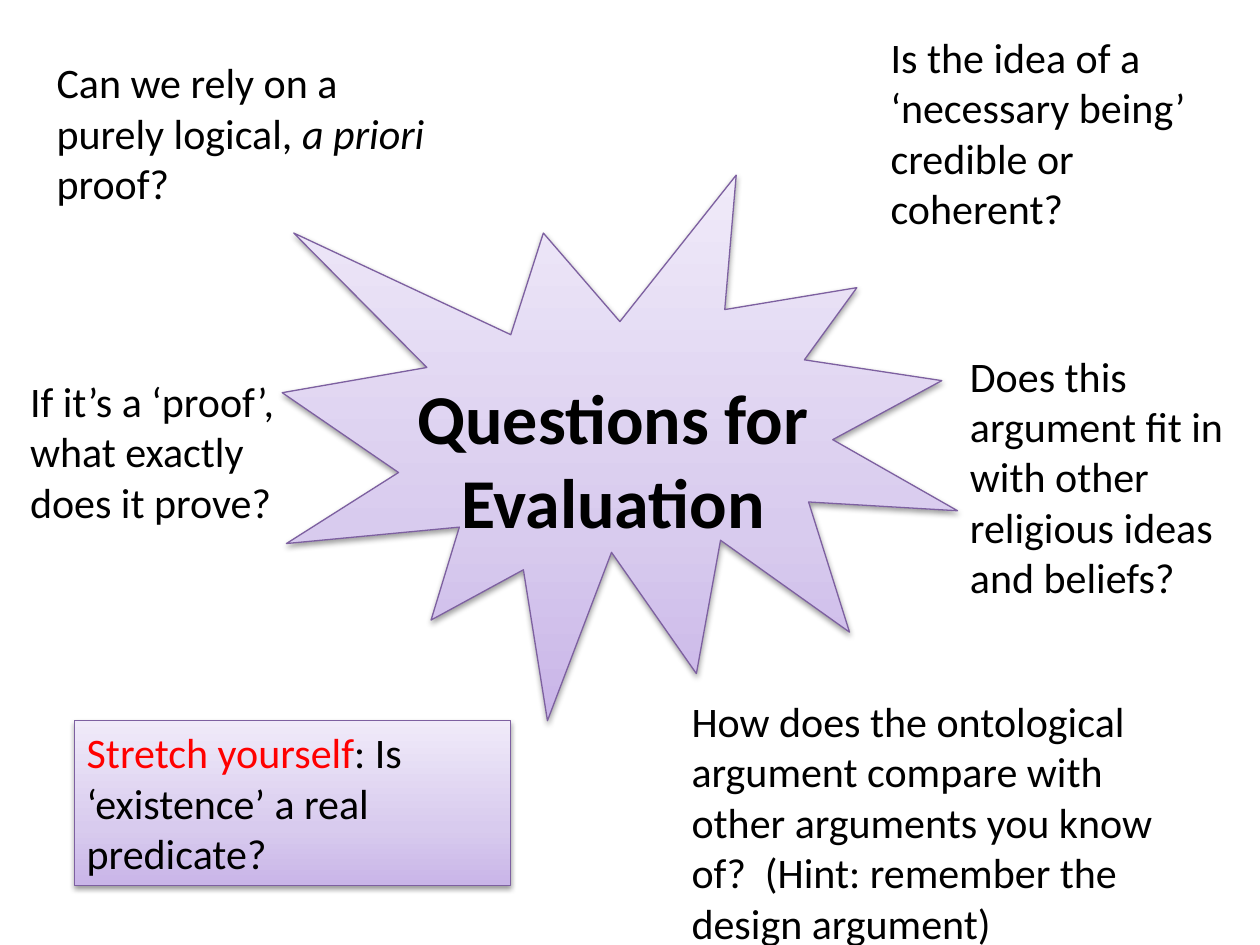
from pptx import Presentation
from pptx.dml.color import RGBColor
from pptx.enum.shapes import MSO_SHAPE
from pptx.enum.text import MSO_ANCHOR, PP_ALIGN
from pptx.oxml import parse_xml
from pptx.oxml.ns import nsdecls
from pptx.util import Inches, Pt

COLORS = {
    "text": "000000",
    "stretch": "FF0000",
    "outline": "7D60A0",
    "dark": "C9B5E8",
    "mid": "D8CBEE",
    "light": "F0EAF9",
}
STOPS = [(0, "dark"), (35, "mid"), (100, "light")]
COLS, ROWS = 100, 75


class Board:
    """Draws on one slide; every box is (column, row, columns, rows)."""
    font = "Calibri"

    def __init__(self, prs):
        self.s = prs.slides.add_slide(prs.slide_layouts[6])
        self.col = prs.slide_width / COLS
        self.row = prs.slide_height / ROWS

    def place(self, box):
        x, y, w, h = box
        return [round(v) for v in (x * self.col, y * self.row,
                                   w * self.col, h * self.row)]

    def set_text(self, sp, runs, size=24, bold=False, align=PP_ALIGN.LEFT,
                 anchor=MSO_ANCHOR.TOP):
        """Fill sp with runs of (text, colour name, italic)."""
        tf = sp.text_frame
        tf.word_wrap = True
        tf.vertical_anchor = anchor
        p = tf.paragraphs[0]
        p.alignment = align
        p.font.name, p.font.size, p.font.bold = self.font, Pt(size), bold
        for text, color, italic in runs:
            r = p.add_run()
            r.text = text
            r.font.italic = italic
            r.font.color.rgb = RGBColor.from_string(COLORS[color])

    def text(self, box, *runs, **style):
        sp = self.s.shapes.add_textbox(*self.place(box))
        self.set_text(sp, runs, **style)

    def shape(self, kind, box, *runs):
        """Add a shape with the lilac gradient, outline and soft shadow."""
        sp = self.s.shapes.add_shape(kind, *self.place(box))
        stops = "".join(
            f'<a:gs pos="{pos * 1000}"><a:srgbClr val="{COLORS[name]}"/></a:gs>'
            for pos, name in STOPS)
        spPr = sp.element.spPr
        spPr.append(parse_xml(
            f'<a:gradFill {nsdecls("a")} rotWithShape="1"><a:gsLst>{stops}'
            '</a:gsLst><a:lin ang="16200000" scaled="0"/></a:gradFill>'))
        sp.line.color.rgb = RGBColor.from_string(COLORS["outline"])
        sp.line.width = Pt(0.75)
        spPr.append(parse_xml(
            f'<a:effectLst {nsdecls("a")}><a:outerShdw blurRad="40000" '
            'dist="20000" dir="5400000" rotWithShape="0">'
            '<a:srgbClr val="000000"><a:alpha val="38000"/></a:srgbClr>'
            '</a:outerShdw></a:effectLst>'))
        if runs:
            self.set_text(sp, runs)


def main():
    prs = Presentation()
    prs.slide_width, prs.slide_height = Inches(10), Inches(7.5)
    board = Board(prs)

    board.shape(MSO_SHAPE.EXPLOSION1, (22.4, 13.9, 53.6, 43.3))
    board.text((24, 27.3, 49.3, 18.1),
               ("Questions for Evaluation", "text", False), size=40, bold=True,
               align=PP_ALIGN.CENTER, anchor=MSO_ANCHOR.MIDDLE)

    board.text((3.5, 4, 33.1, 13.1),
               ("Can we rely on a purely logical, ", "text", False),
               ("a priori", "text", True),
               (" proof?", "text", False))
    board.shape(MSO_SHAPE.RECTANGLE, (5.9, 57.2, 34.6, 13.1),
                ("Stretch yourself", "stretch", False),
                (": Is ‘existence’ a real predicate?", "text", False))

    questions = [
        ((69.7, 2, 27.6, 17.2),
         "Is the idea of a ‘necessary being’ credible or coherent?"),
        ((53.9, 54.7, 40.8, 21.2),
         "How does the ontological argument compare with other arguments "
         "you know of?  (Hint: remember the design argument)"),
        ((1.4, 29.3, 21.6, 13.1),
         "If it’s a ‘proof’, what exactly does it prove?"),
        ((76, 27.3, 23, 21.2),
         "Does this argument fit in with other religious ideas and beliefs?"),
    ]
    for box, question in questions:
        board.text(box, (question, "text", False))

    prs.save("out.pptx")


if __name__ == "__main__":
    main()
